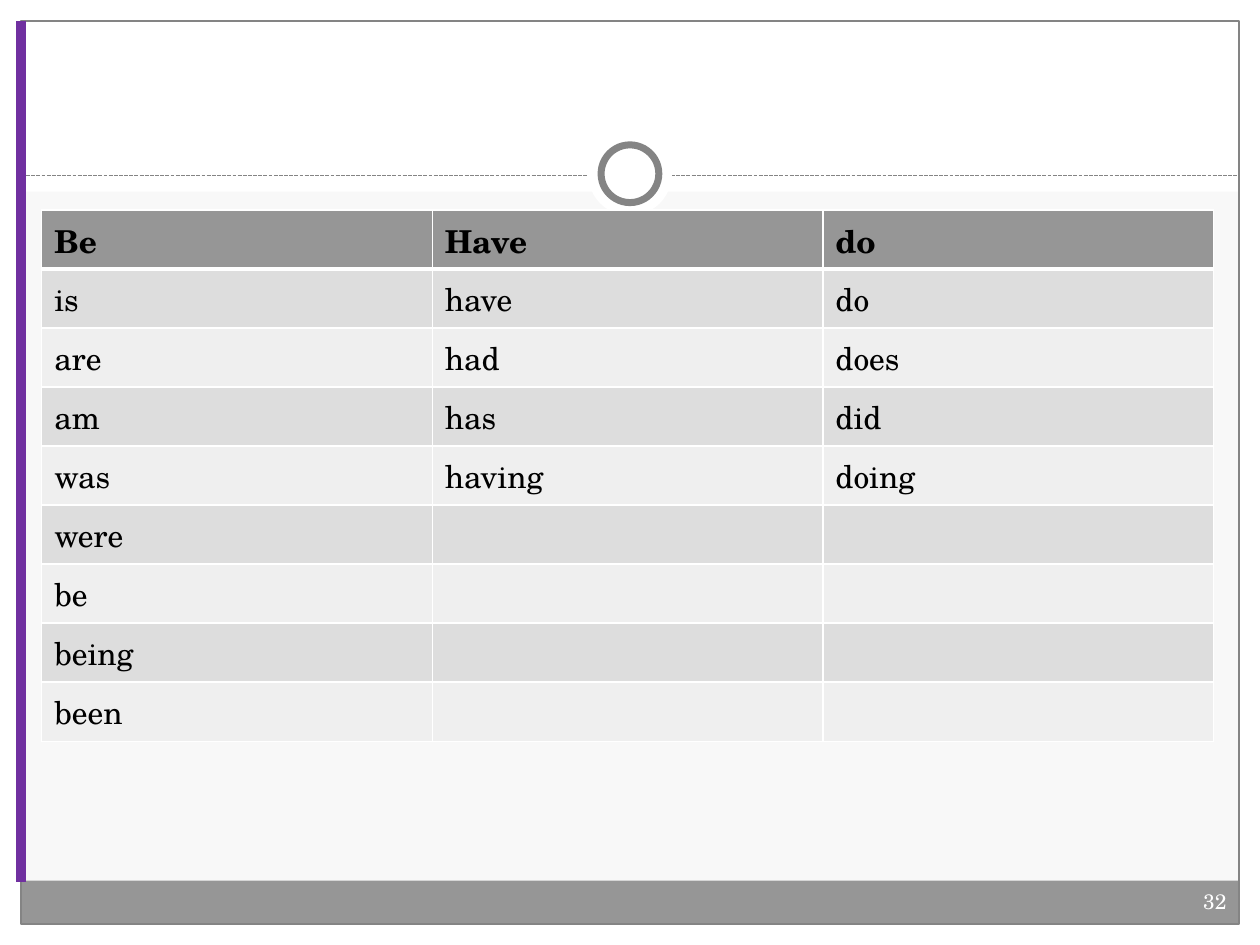
from dataclasses import dataclass

from lxml import etree
from pptx import Presentation
from pptx import util as u
from pptx.dml.color import RGBColor
from pptx.enum import dml, shapes, text
from pptx.oxml import ns

Pt = u.Pt


@dataclass(frozen=True)
class Theme:
    """Holds the colours, the font and the type sizes."""
    back: str = "F8F8F8"
    white: str = "FFFFFF"
    gray: str = "969696"
    rule: str = "848484"
    accent: str = "7030A0"
    ink: str = "000000"
    bands: tuple = ("DDDDDD", "EFEFEF")
    font: str = "TeX Gyre Schola"
    body: int = 18
    small: int = 12


T = Theme()
VERBS = [
    ["Be", "Have", "do"],
    ["is", "have", "do"],
    ["are", "had", "does"],
    ["am", "has", "did"],
    ["was", "having", "doing"],
    ["were"], ["be"], ["being"], ["been"],
]


def apply(obj, vals):
    """Set each attribute in vals on obj."""
    for name, val in vals.items():
        setattr(obj, name, val)


def paint(fill, color):
    """Give a fill one solid colour."""
    fill.solid()
    fill.fore_color.rgb = RGBColor.from_string(color)


def stroke(line, color, width, **vals):
    """Give a line its colour, width and other values."""
    paint(line.fill, color)
    apply(line, {"width": Pt(width), **vals})


def write(para, words, color, size, bold=False):
    """Add one formatted run to a paragraph."""
    run = para.add_run()
    run.text = words
    apply(run.font, {"name": T.font, "size": Pt(size), "bold": bold})
    run.font.color.rgb = RGBColor.from_string(color)


def shape(slide, kind, box, fill=None, line=None):
    """Add a preset shape with an optional fill and line."""
    item = slide.shapes.add_shape(kind, *map(Pt, box))
    item.shadow.inherit = False
    if fill:
        paint(item.fill, fill)
    else:
        item.fill.background()
    if line:
        stroke(item.line, *line)
    else:
        item.line.fill.background()


def rule(slide, ends, color, width, **vals):
    """Add a straight line without a shadow."""
    item = slide.shapes.add_connector(shapes.MSO_CONNECTOR.STRAIGHT, *map(Pt, ends))
    stroke(item.line, color, width, **vals)
    etree.SubElement(item._element.spPr, ns.qn("a:effectLst"))


def frame(slide, box, head, foot):
    """Draw the margins, footer band, outline, divider and ring."""
    x, y, w, h = box
    right, low = x + w, y + h
    rect, oval = shapes.MSO_SHAPE.RECTANGLE, shapes.MSO_SHAPE.OVAL
    full, tall = right + x, low + y
    for part in ((0, low, full, y), (0, 0, full, head),
                 (0, 0, x, tall), (right, 0, x, tall)):
        shape(slide, rect, part, T.white)
    shape(slide, rect, (x, low - foot, w, foot), T.gray)
    shape(slide, rect, box, line=(T.rule, 0.75))
    mid = head - 9
    rule(slide, (x, mid, right, mid), T.rule, 0.75,
         dash_style=dml.MSO_LINE.SQUARE_DOT)
    for size, line in ((48, None), (33, (T.rule, 4))):
        spot = (full / 2 - size / 2, mid - 1.2 - size / 2, size, size)
        shape(slide, oval, spot, T.white, line)


def number(slide, box, words):
    """Place the page number at the right of its box."""
    body = slide.shapes.add_textbox(*map(Pt, box)).text_frame
    body.word_wrap = True
    para = body.paragraphs[0]
    para.alignment = text.PP_ALIGN.RIGHT
    write(para, words, T.white, T.small)


def border(cell, low):
    """Draw white cell edges, with the given width at the bottom."""
    props = cell._tc.get_or_add_tcPr()
    for at, (side, width) in enumerate(zip("LRTB", (1, 1, 1, low))):
        edge = etree.Element(ns.qn("a:ln" + side), w=str(Pt(width)))
        fill = etree.SubElement(edge, ns.qn("a:solidFill"))
        etree.SubElement(fill, ns.qn("a:srgbClr"), val=T.white)
        props.insert(at, edge)


def grid(slide, box, rows):
    """Fill a banded table whose first row is the heading."""
    table = slide.shapes.add_table(len(rows), len(rows[0]), *map(Pt, box)).table
    for r, words in enumerate(rows):
        top = r == 0
        for c in range(len(rows[0])):
            cell = table.cell(r, c)
            paint(cell.fill, T.gray if top else T.bands[(r - 1) % 2])
            border(cell, 3 if top else 1)
            para = cell.text_frame.paragraphs[0]
            if c < len(words):
                write(para, words[c], T.ink, T.body, top)
            else:
                apply(para.font, {"name": T.font, "size": Pt(T.body)})


def main():
    """Build and save the slide."""
    deck = Presentation()
    apply(deck, {"slide_width": Pt(720), "slide_height": Pt(540)})
    slide = deck.slides.add_slide(deck.slide_layouts[6])
    paint(slide.background.fill, T.back)
    frame(slide, (12, 12, 696, 516), 109.5, 24.8)
    number(slide, (426, 504, 282, 29), "32")
    grid(slide, (23.8, 120, 669.6, 303.75), VERBS)
    rule(slide, (12, 12, 12, 504), T.accent, 6)
    deck.save("out.pptx")


if __name__ == "__main__":
    main()
